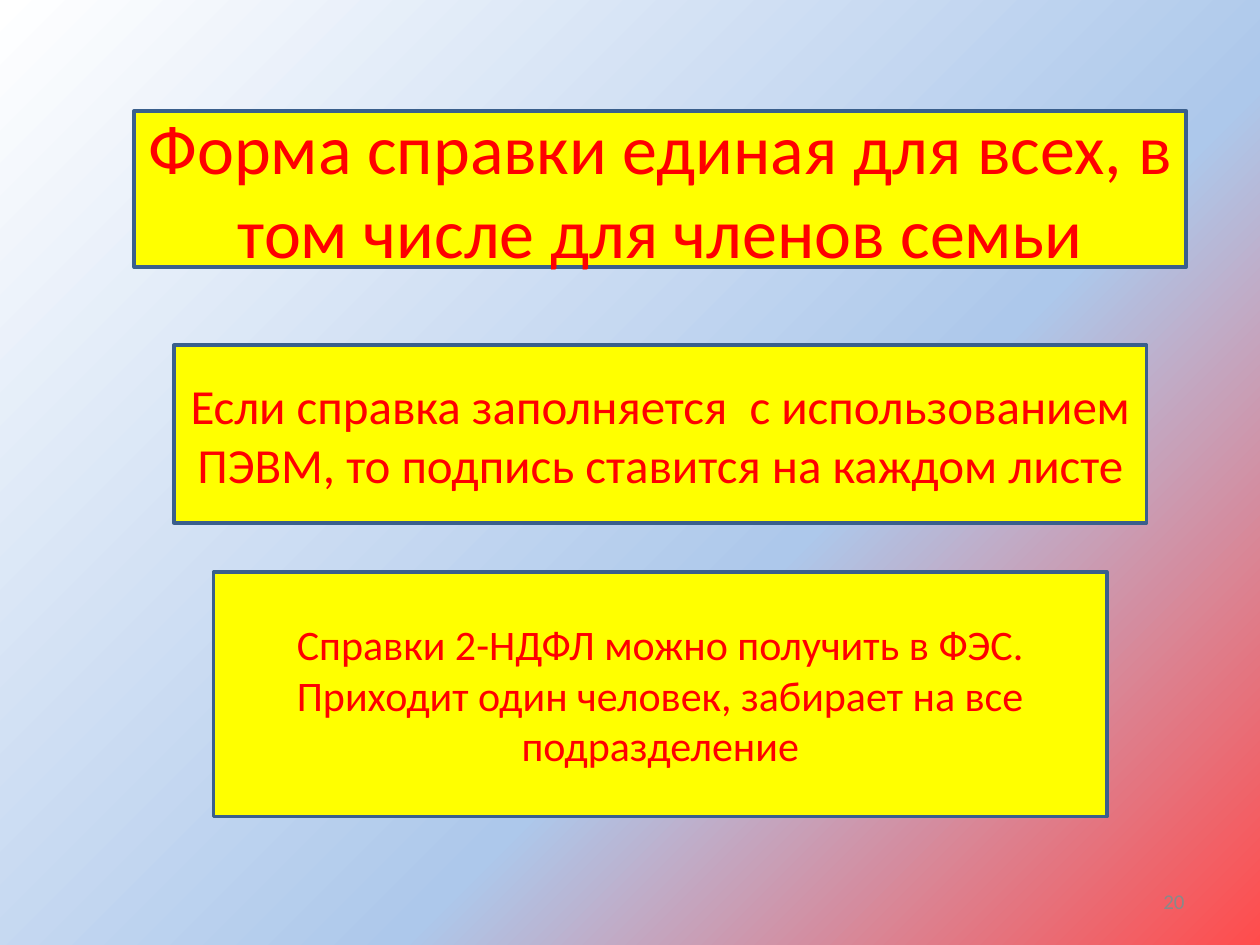
from copy import deepcopy

from pptx import Presentation
from pptx.dml.color import RGBColor
from pptx.enum.shapes import MSO_SHAPE
from pptx.enum.text import MSO_ANCHOR, PP_ALIGN
from pptx.oxml.ns import qn
from pptx.util import Inches, Pt

RECT = MSO_SHAPE.RECTANGLE
MIDDLE = MSO_ANCHOR.MIDDLE
CENTER, RIGHT = PP_ALIGN.CENTER, PP_ALIGN.RIGHT

WIDTH, HEIGHT = 10, 7.5
AXIS = 5.24  # common centre line of the boxes
FONT = "Calibri"
YELLOW, RED, BLUE, GREY = "FFFF00", "FF0000", "3A5F8C", "898989"
BACKGROUND = [(0, "FFFFFF"), (0.61, "ADC8EB"), (1, "FF4C4C")]

# text, top, width, height, font size
BOXES = [
    ("Форма справки единая для всех, в том числе для членов семьи",
     0.88, 8.35, 1.24, 40),
    ("Если справка заполняется  с использованием ПЭВМ, "
     "то подпись ставится на каждом листе",
     2.74, 7.72, 1.41, 28),
    ("Справки 2-НДФЛ можно получить в ФЭС. "
     "Приходит один человек, забирает на все подразделение",
     4.54, 7.09, 1.94, 24),
]
PAGE_NUMBER = "20"


def rgb(color):
    return RGBColor.from_string(color)


def set_background(s):
    fill = s.background.fill
    fill.gradient()
    fill.gradient_angle = 315
    stops = s.element.find(".//" + qn("a:gsLst"))
    stops.insert(1, deepcopy(stops[0]))
    for stop, (position, color) in zip(fill.gradient_stops, BACKGROUND):
        stop.position = position
        stop.color.rgb = rgb(color)


def write(sp, text, size, color, align):
    tf = sp.text_frame
    tf.word_wrap = True
    tf.vertical_anchor = MIDDLE
    p = tf.paragraphs[0]
    p.text = text
    p.alignment = align
    p.font.name = FONT
    p.font.size = Pt(size)
    p.font.color.rgb = rgb(color)


def add_box(s, text, top, width, height, size):
    sp = s.shapes.add_shape(RECT, Inches(AXIS - width / 2), Inches(top),
                            Inches(width), Inches(height))
    sp.shadow.inherit = False
    sp.fill.solid()
    sp.fill.fore_color.rgb = rgb(YELLOW)
    sp.line.color.rgb = rgb(BLUE)
    sp.line.width = Pt(2)
    write(sp, text, size, RED, CENTER)


prs = Presentation()
prs.slide_width, prs.slide_height = Inches(WIDTH), Inches(HEIGHT)
s = prs.slides.add_slide(prs.slide_layouts[6])
set_background(s)
for box in BOXES:
    add_box(s, *box)
number = s.shapes.add_textbox(Inches(7.17), Inches(6.95),
                              Inches(2.33), Inches(0.4))
write(number, PAGE_NUMBER, 12, GREY, RIGHT)
prs.save("out.pptx")
